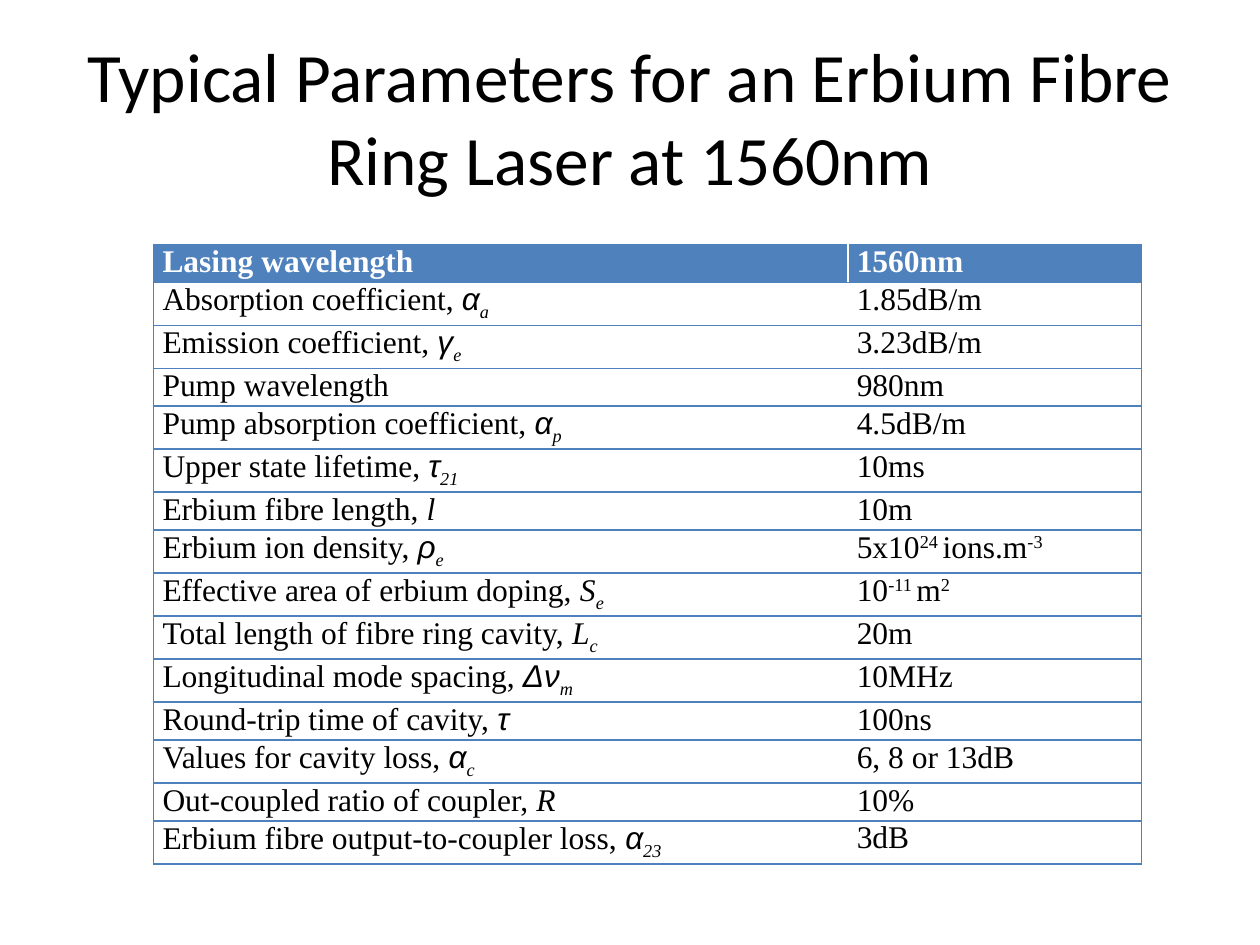
from lxml import etree
from pptx import Presentation
from pptx.dml.color import RGBColor
from pptx.enum import text
from pptx.oxml import ns
from pptx.util import Inches, Pt

TITLE = "Typical Parameters for an Erbium Fibre Ring Laser at 1560nm"
HEAD = ("Lasing wavelength", "1560nm")
ROWS = [
    ("Absorption coefficient, ", "α", "a", ["1.85dB/m"]),
    ("Emission coefficient, ", "γ", "e", ["3.23dB/m"]),
    ("Pump wavelength", "", "", ["980nm"]),
    ("Pump absorption coefficient, ", "α", "p", ["4.5dB/m"]),
    ("Upper state lifetime, ", "τ", "21", ["10ms"]),
    ("Erbium fibre length, ", "l", "", ["10m"]),
    ("Erbium ion density, ", "ρ", "e", ["5x10", "24 ", "ions.m", "-3"]),
    ("Effective area of erbium doping, ", "S", "e", ["10", "-11 ", "m", "2"]),
    ("Total length of fibre ring cavity, ", "L", "c", ["20m"]),
    ("Longitudinal mode spacing, ", "Δν", "m", ["10MHz"]),
    ("Round-trip time of cavity, ", "τ", "", ["100ns"]),
    ("Values for cavity loss, ", "α", "c", ["6, 8 or 13dB"]),
    ("Out-coupled ratio of coupler, ", "R", "", ["10%"]),
    ("Erbium fibre output-to-coupler loss, ", "α", "23", ["3dB"]),
]
THEME = {
    "title": "Calibri", "body": "Times New Roman", "greek": "Arial",
    "big": 39.6, "size": 18,
    "ink": "000000", "light": "FFFFFF", "blue": "4F81BD",
}
COLS = (5.51, 2.33)
HIGH = 0.3


def add_run(par, words, font="body", size="size", ink="ink", bold=False, slant=False, base=0):
    run = par.add_run()
    run.text = words
    face = run.font
    face.name = THEME[font]
    face.size = Pt(THEME[size])
    face.color.rgb = RGBColor.from_string(THEME[ink])
    face.bold = bold
    face.italic = slant
    if base:
        face._element.set("baseline", str(base * 1000))


def add_edge(cell, side):
    props = cell._tc.get_or_add_tcPr()
    line = etree.SubElement(props, ns.qn("a:ln" + side), w=str(Pt(1)))
    fill = etree.SubElement(line, ns.qn("a:solidFill"))
    etree.SubElement(fill, ns.qn("a:srgbClr"), val=THEME["blue"])


def set_cell(cell, sides, head, runs):
    for side in sides:
        add_edge(cell, side)
    if head:
        cell.fill.solid()
        cell.fill.fore_color.rgb = RGBColor.from_string(THEME["blue"])
    else:
        cell.fill.background()
    cell.margin_left = cell.margin_right = Inches(0.07)
    cell.margin_top = cell.margin_bottom = 0
    par = cell.text_frame.paragraphs[0]
    par.alignment = text.PP_ALIGN.JUSTIFY
    par.space_after = Pt(9)
    for words, style in runs:
        add_run(par, words, **style)


def name_runs(label, sign, sub):
    runs = [(label, {})]
    if sign:
        font = "body" if sign.isascii() else "greek"
        runs.append((sign, {"font": font, "slant": True}))
    if sub:
        runs.append((sub, {"slant": True, "base": -25}))
    return runs


def value_runs(parts):
    return [(part, {"base": 30 * (i % 2)}) for i, part in enumerate(parts)]


def add_title(slide):
    box = slide.shapes.add_textbox(Inches(0.5), Inches(0.3), Inches(9), Inches(1.25))
    frame = box.text_frame
    frame.word_wrap = True
    frame.vertical_anchor = text.MSO_ANCHOR.MIDDLE
    par = frame.paragraphs[0]
    par.alignment = text.PP_ALIGN.CENTER
    add_run(par, TITLE, font="title", size="big")


def add_grid(slide):
    count = len(ROWS) + 1
    grid = slide.shapes.add_table(
        count, len(COLS), Inches(1.22), Inches(1.94),
        Inches(sum(COLS)), Inches(HIGH * count),
    ).table
    grid.horz_banding = False
    for col, wide in zip(grid.columns, COLS):
        col.width = Inches(wide)
    bright = {"ink": "light", "bold": True}
    lines = [[[(words, bright)] for words in HEAD]]
    lines += [[name_runs(*row[:3]), value_runs(row[3])] for row in ROWS]
    for r, line in enumerate(lines):
        for c, runs in enumerate(line):
            set_cell(grid.cell(r, c), ("LTB", "RTB")[c], r == 0, runs)


def main():
    deck = Presentation()
    deck.slide_width, deck.slide_height = Inches(10), Inches(7.5)
    slide = deck.slides.add_slide(deck.slide_layouts[6])
    add_title(slide)
    add_grid(slide)
    deck.save("out.pptx")


if __name__ == "__main__":
    main()
